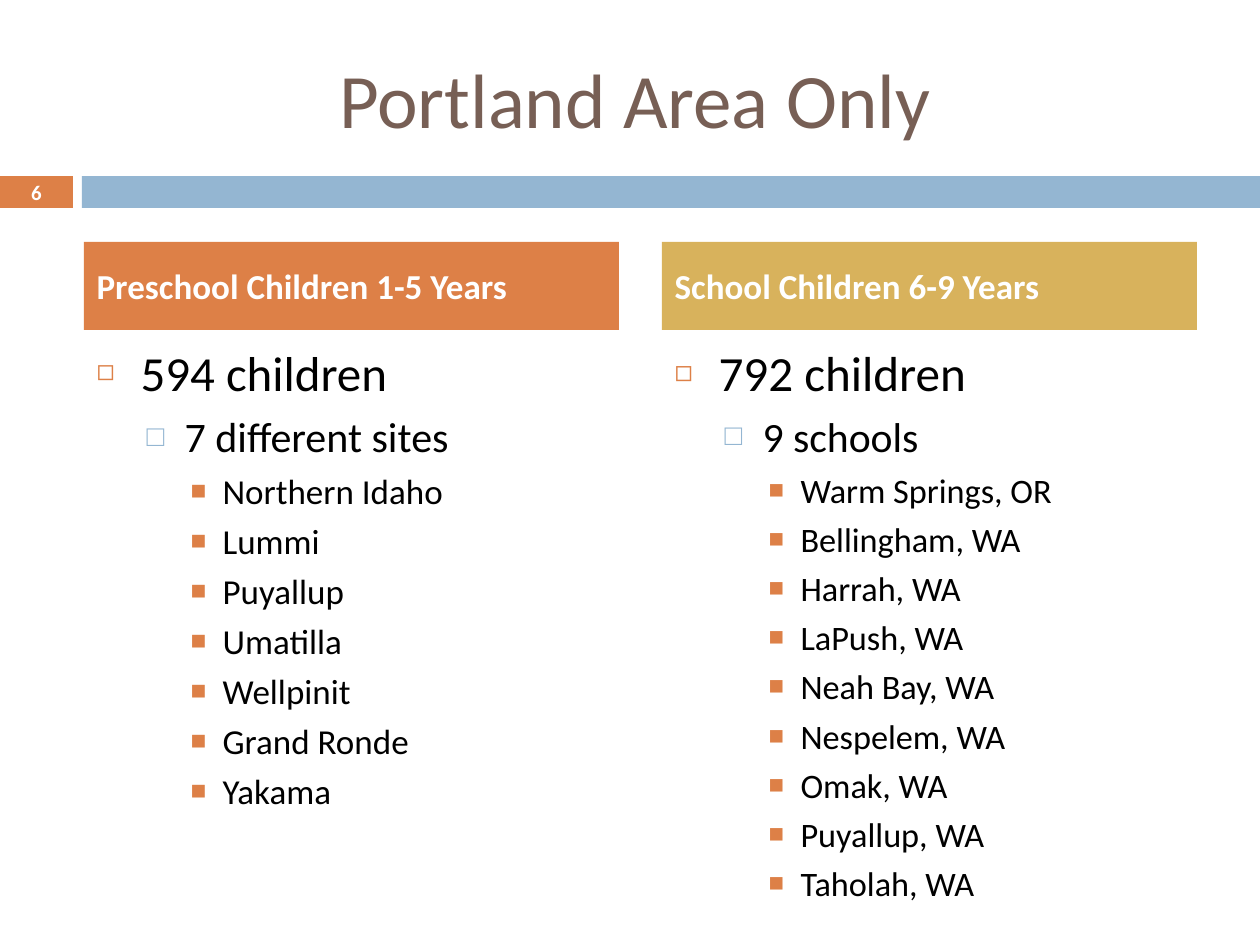
from lxml.etree import SubElement
from pptx import Presentation
from pptx.dml.color import RGBColor
from pptx.enum.shapes import MSO_SHAPE
from pptx.enum.text import MSO_ANCHOR, MSO_AUTO_SIZE, PP_ALIGN
from pptx.oxml.ns import qn
from pptx.util import Emu, Pt

ORANGE = RGBColor(0xDD, 0x80, 0x47)
BLUE = RGBColor(0x94, 0xB6, 0xD2)
GOLD = RGBColor(0xD8, 0xB2, 0x5C)
BROWN = RGBColor(0x77, 0x5F, 0x55)
BLACK = RGBColor(0, 0, 0)
WHITE = RGBColor(255, 255, 255)

FONT = "Calibri"
COMPARISON_LAYOUT = 4
LEVELS = [
    (44, 44, 7, "◻", ORANGE, 60),
    (88, 38, 5.5, "□", BLUE, 70),
    (126, 32, 4.6, "■", ORANGE, 75),
]
COLUMNS = [
    (84, ORANGE, "Preschool Children 1-5 Years", (28, 24, 20),
     "594 children", "7 different sites",
     ["Northern Idaho", "Lummi", "Puyallup", "Umatilla", "Wellpinit",
      "Grand Ronde", "Yakama"]),
    (662, GOLD, "School Children 6-9 Years", (28.1, 23.8, 19.6),
     "792 children", "9 schools",
     ["Warm Springs, OR", "Bellingham, WA", "Harrah, WA", "LaPush, WA",
      "Neah Bay, WA", "Nespelem, WA", "Omak, WA", "Puyallup, WA",
      "Taholah, WA"]),
]


def px(n):
    return Emu(round(n * 914400 / 126))


class Deck:
    def __init__(self):
        self.prs = Presentation()
        self.prs.slide_width, self.prs.slide_height = px(1260), px(945)
        layout = self.prs.slide_layouts[COMPARISON_LAYOUT]
        self.s = self.prs.slides.add_slide(layout)

    def style(self, p, size, color, bold=False):
        for r in p.runs:
            r.font.name = FONT
            r.font.size = Pt(size)
            r.font.bold = bold
            r.font.color.rgb = color

    def bar(self, x, y, w, h, color):
        sp = self.s.shapes.add_shape(MSO_SHAPE.RECTANGLE, px(x), px(y), px(w), px(h))
        sp.shadow.inherit = False
        sp.fill.solid()
        sp.fill.fore_color.rgb = color
        sp.line.fill.background()

    def placeholder(self, idx, x, y, w, h, anchor=MSO_ANCHOR.MIDDLE):
        sp = self.s.placeholders[idx]
        sp.left, sp.top, sp.width, sp.height = px(x), px(y), px(w), px(h)
        sp.text_frame.auto_size = MSO_AUTO_SIZE.NONE
        sp.text_frame.vertical_anchor = anchor
        return sp

    def title(self, text, x, y, w, h):
        tf = self.placeholder(0, x, y, w, h).text_frame
        tf.text = text
        tf.paragraphs[0].alignment = PP_ALIGN.CENTER
        self.style(tf.paragraphs[0], 44, BROWN)

    def header(self, idx, text, color, x, y, w, h):
        sp = self.placeholder(idx, x, y, w, h)
        sp.fill.solid()
        sp.fill.fore_color.rgb = color
        sp.text_frame.text = text
        p = sp.text_frame.paragraphs[0]
        p.space_before = Pt(7)
        self.style(p, 20, WHITE, bold=True)

    def bullets(self, idx, items, sizes, x, y, w, h):
        tf = self.placeholder(idx, x, y, w, h, MSO_ANCHOR.TOP).text_frame
        tf.text = "\n".join(text for _, text in items)
        for p, (level, _) in zip(tf.paragraphs, items):
            indent, hang, before, char, color, percent = LEVELS[level]
            p.level = level
            p.space_before = Pt(before)
            pPr = p._p.get_or_add_pPr()
            pPr.set("marL", str(px(indent)))
            pPr.set("indent", str(-px(hang)))
            clr = SubElement(pPr, qn("a:buClr"))
            SubElement(clr, qn("a:srgbClr"), val=str(color))
            SubElement(pPr, qn("a:buSzPct"), val=str(percent * 1000))
            SubElement(pPr, qn("a:buChar"), char=char)
            self.style(p, sizes[level], BLACK)

    def page_number(self, text, x, y, w, h):
        tf = self.s.shapes.add_textbox(px(x), px(y), px(w), px(h)).text_frame
        tf.word_wrap = True
        tf.margin_left = tf.margin_right = tf.margin_top = tf.margin_bottom = 0
        tf.vertical_anchor = MSO_ANCHOR.MIDDLE
        tf.text = text
        tf.paragraphs[0].alignment = PP_ALIGN.CENTER
        self.style(tf.paragraphs[0], 11.9, WHITE, bold=True)


def main():
    deck = Deck()
    deck.bar(0, 176, 73, 32, ORANGE)
    deck.bar(82, 176, 1178, 32, BLUE)
    deck.title("Portland Area Only", 73, 38, 1124, 120)
    deck.page_number("6", 0, 176, 73, 32)
    for i, (x, color, heading, sizes, total, group, places) in enumerate(COLUMNS):
        items = [(0, total), (1, group)] + [(2, place) for place in places]
        deck.header(2 * i + 1, heading, color, x, 242, 535, 88)
        deck.bullets(2 * i + 2, items, sizes, x, 336, 535, 494)
    deck.prs.save("out.pptx")


if __name__ == "__main__":
    main()
